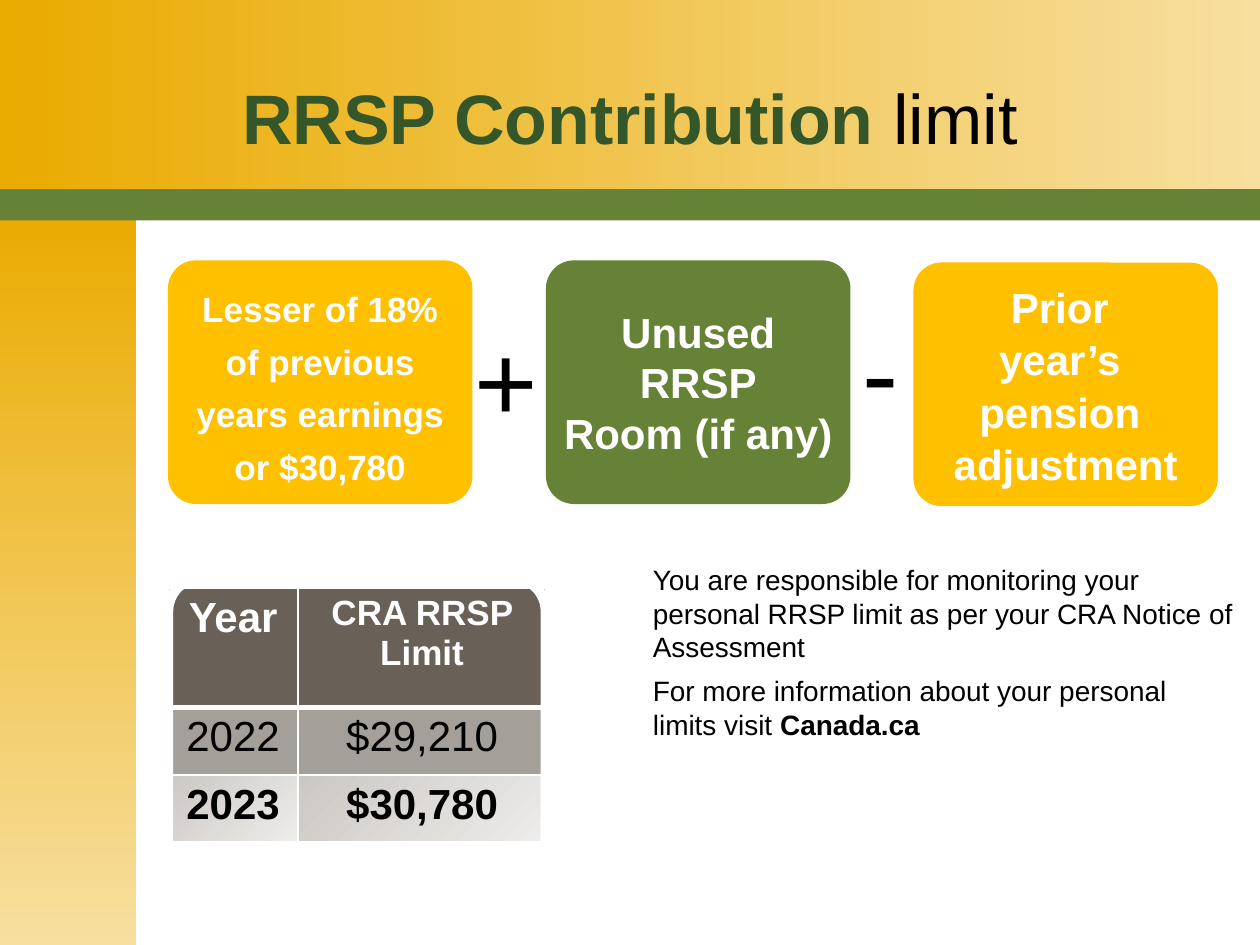
"""Build the RRSP contribution limit slide."""
from lxml import etree
from pptx import Presentation
from pptx.dml.color import RGBColor
from pptx.enum.shapes import MSO_SHAPE
from pptx.enum.text import MSO_ANCHOR, MSO_AUTO_SIZE, PP_ALIGN
from pptx.oxml.ns import qn
from pptx.util import Pt

RECT, ROUND = MSO_SHAPE.RECTANGLE, MSO_SHAPE.ROUNDED_RECTANGLE
CENTER, LEFT = PP_ALIGN.CENTER, PP_ALIGN.LEFT
MIDDLE, GROW = MSO_ANCHOR.MIDDLE, MSO_AUTO_SIZE.SHAPE_TO_FIT_TEXT
PX = 7620
THEME = {
    "font": "Arial",
    "white": "FFFFFF", "black": "000000", "title": "345629",
    "green": "658237", "yellow": "FFC000",
    "gold": ("EAAB00", "F7DF9F"),
    "head": "696158", "row": "A59F99", "last": ("CBC7C2", "EEEDEC"),
    "title_pt": 40, "symbol_pt": 62, "big_pt": 24, "mid_pt": 20, "note_pt": 16,
}


def paint(fill, color, angle=0):
    if isinstance(color, str):
        fill.solid()
        fill.fore_color.rgb = RGBColor.from_string(color)
        return
    fill.gradient()
    fill.gradient_angle = angle
    for stop, value in zip(fill.gradient_stops, color):
        stop.color.rgb = RGBColor.from_string(value)


def write(tf, paragraphs, size, align=LEFT, **spacing):
    for i, runs in enumerate(paragraphs):
        p = tf.paragraphs[0] if i == 0 else tf.add_paragraph()
        p.alignment = align
        for name, value in spacing.items():
            setattr(p, name, value)
        for text, color, bold in runs:
            r = p.add_run()
            r.text = text
            fmt = {"name": THEME["font"], "size": Pt(size), "bold": bold}
            for name, value in fmt.items():
                setattr(r.font, name, value)
            r.font.color.rgb = RGBColor.from_string(THEME[color])


prs = Presentation()
prs.slide_width, prs.slide_height = 1200 * PX, 900 * PX
s = prs.slides.add_slide(prs.slide_layouts[5])
shapes = s.shapes

for box, angle in (((0, 0, 1200, 180), 0), ((0, 200, 130, 700), 270)):
    sp = shapes.add_shape(RECT, *(v * PX for v in box))
    sp.shadow.inherit = False
    sp.line.fill.background()
    paint(sp.fill, THEME["gold"], angle)

title = shapes.title
place = {"left": 60, "top": 36, "width": 1080, "height": 150}
for name, value in place.items():
    setattr(title, name, value * PX)
title.text_frame.vertical_anchor = MIDDLE
write(title.text_frame,
      [[("RRSP Contribution", "title", True), (" limit", "black", False)]],
      THEME["title_pt"], CENTER)
shapes._spTree.append(title._element)

cards = [
    (160, 248, "yellow", "mid_pt", Pt(30),
     ["Lesser of 18%", "of previous", "years earnings", "or $30,780"]),
    (520, 248, "green", "big_pt", None, ["Unused", "RRSP", "Room (if any)"]),
    (870, 250, "yellow", "big_pt", Pt(30),
     ["Prior ", "year’s ", "pension ", "adjustment"]),
]
for x, y, color, size, spacing, lines in cards:
    sp = shapes.add_shape(ROUND, x * PX, y * PX, 290 * PX, 232 * PX)
    sp.adjustments[0] = 0.115
    sp.shadow.inherit = False
    sp.line.fill.background()
    paint(sp.fill, THEME[color])
    tf = sp.text_frame
    fmt = {"word_wrap": False, "vertical_anchor": MIDDLE, "margin_left": 0,
           "margin_top": 0, "margin_right": 0, "margin_bottom": 0}
    for name, value in fmt.items():
        setattr(tf, name, value)
    write(tf, [[(line, "white", True)] for line in lines],
          THEME[size], CENTER, line_spacing=spacing)

for x, y, symbol in ((440, 298, "+"), (810, 290, "-")):
    tf = shapes.add_textbox(x * PX, y * PX, 90 * PX, 130 * PX).text_frame
    for name, value in {"word_wrap": True, "auto_size": GROW, "margin_top": 0}.items():
        setattr(tf, name, value)
    write(tf, [[(symbol, "black", False)]], THEME["symbol_pt"])

tf = shapes.add_textbox(610 * PX, 530 * PX, 580 * PX, 184 * PX).text_frame
tf.word_wrap, tf.auto_size = True, GROW
write(tf, [
    [("You are responsible for monitoring your personal RRSP limit "
      "as per your CRA Notice of Assessment", "black", False)],
    [("For more information about your personal limits visit ", "black", False),
     ("Canada.ca", "black", True)],
], THEME["note_pt"], space_after=Pt(6))

rows = [
    (114, "head", "white", True, [("Year", "big_pt"), ("CRA RRSP Limit", "mid_pt")]),
    (64, "row", "black", False, [("2022", "big_pt"), ("$29,210", "big_pt")]),
    (64, "last", "black", True, [("2023", "big_pt"), ("$30,780", "big_pt")]),
]
table = shapes.add_table(3, 2, 160 * PX, 560 * PX, 360 * PX, 242 * PX).table
table.horz_banding = False
for col, width in zip(table.columns, (124, 236)):
    col.width = width * PX
for i, (height, fill, color, bold, texts) in enumerate(rows):
    table.rows[i].height = height * PX
    for j, (text, size) in enumerate(texts):
        cell = table.cell(i, j)
        paint(cell.fill, THEME[fill], 315)
        write(cell.text_frame, [[(text, color, bold)]], THEME[size], CENTER)
        widths = {"lnL": 1, "lnR": 1, "lnT": 3 if i == 1 else 1, "lnB": 3 if i == 0 else 1}
        tcPr = cell._tc.get_or_add_tcPr()
        for k, (tag, width) in enumerate(widths.items()):
            ln = etree.Element(qn("a:" + tag), w=str(Pt(width)))
            solid = etree.SubElement(ln, qn("a:solidFill"))
            etree.SubElement(solid, qn("a:srgbClr"), val=THEME["white"])
            tcPr.insert(k, ln)

frame = shapes.add_shape(ROUND, 160 * PX, 550 * PX, 360 * PX, 310 * PX)
frame.adjustments[0] = 0.104
frame.shadow.inherit = False
frame.fill.background()
frame.line.width = Pt(6)
paint(frame.line.fill, THEME["white"])

bar = shapes.add_shape(RECT, 0, 180 * PX, 1200 * PX, 30 * PX)
bar.shadow.inherit = False
bar.line.fill.background()
paint(bar.fill, THEME["green"])

prs.save("out.pptx")
